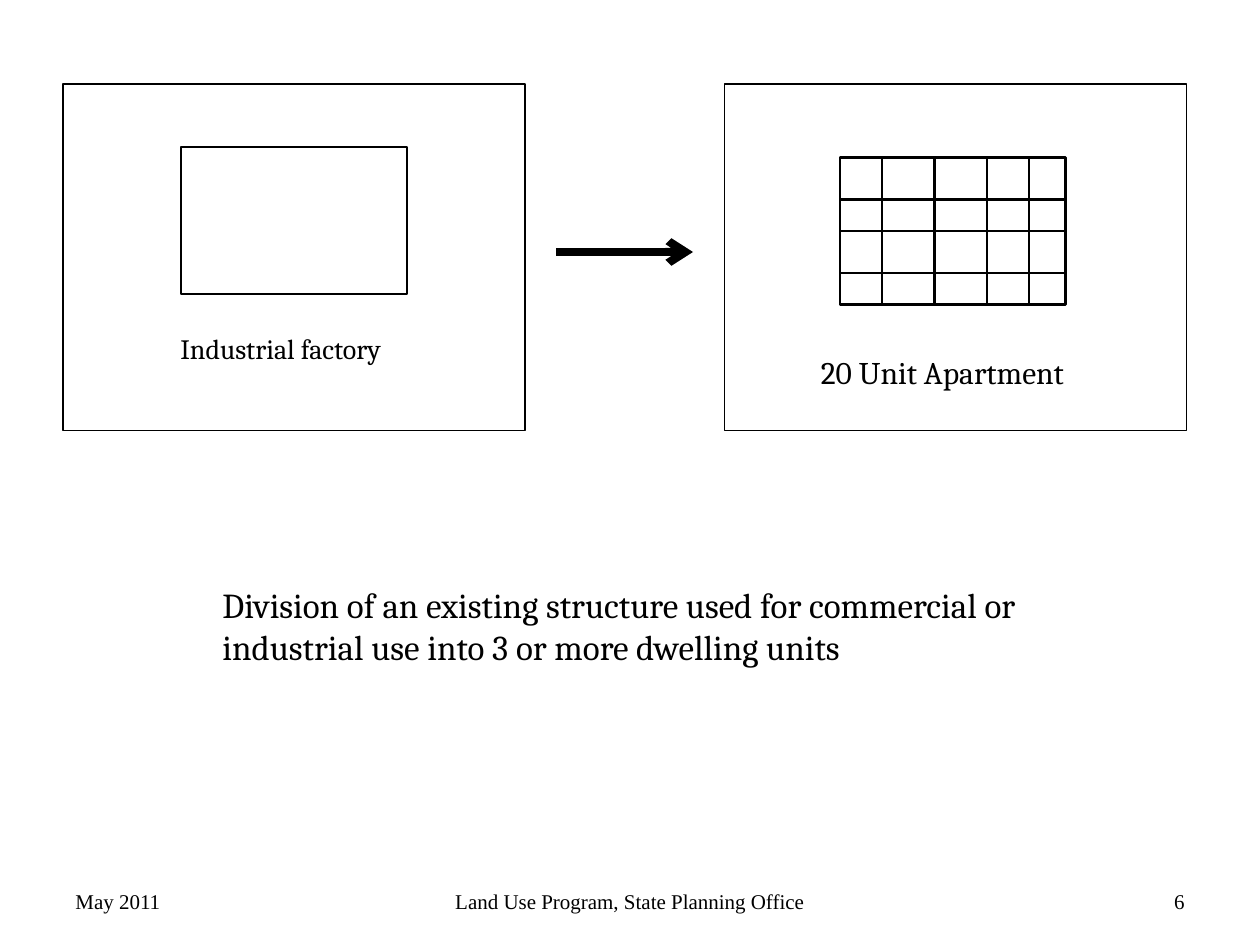
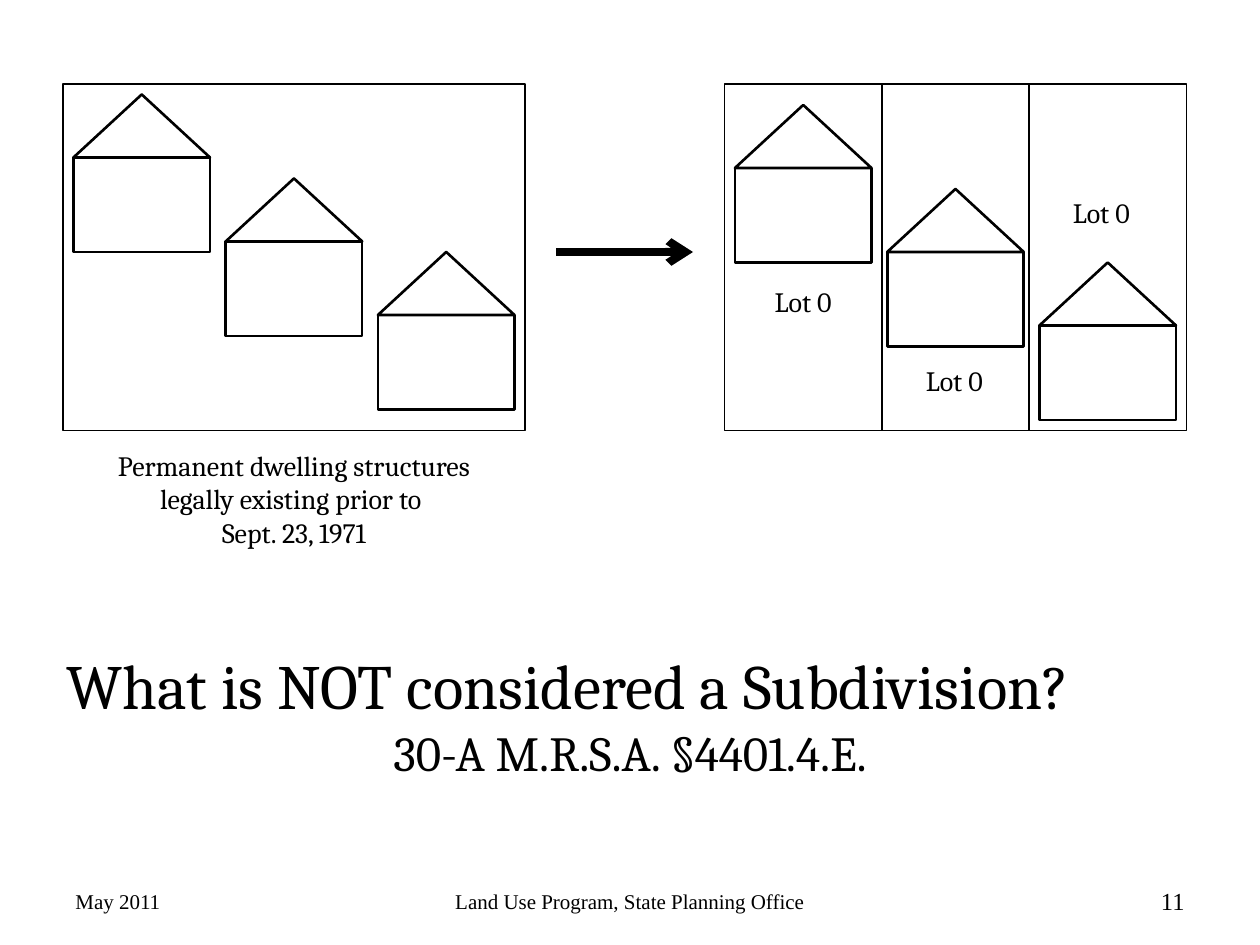
import pptx
import pptx.util
import pptx.dml.color
import pptx.enum.shapes
import pptx.enum.text
import pptx.oxml.ns
import lxml.etree

BLACK = pptx.dml.color.RGBColor(0, 0, 0)
WHITE = pptx.dml.color.RGBColor(255, 255, 255)
HEAD = "Cambria"
FOOT = "Times New Roman"
RECT = pptx.enum.shapes.MSO_SHAPE.RECTANGLE
ROOF = pptx.enum.shapes.MSO_SHAPE.ISOSCELES_TRIANGLE
LINE = pptx.enum.shapes.MSO_CONNECTOR.STRAIGHT
LEFT = pptx.enum.text.PP_ALIGN.LEFT
MID = pptx.enum.text.PP_ALIGN.CENTER
RIGHT = pptx.enum.text.PP_ALIGN.RIGHT

deck = pptx.Presentation()
deck.slide_width = pptx.util.Inches(10)
deck.slide_height = pptx.util.Inches(7.5)
COL = deck.slide_width / 120
ROW = deck.slide_height / 90


def draw(slide, kind, x, y, w, h, pts, fill=None):
    left, top, wide, high = [round(n) for n in (x * COL, y * ROW, w * COL, h * ROW)]
    if kind is LINE:
        item = slide.shapes.add_connector(kind, left, top, left + wide, top + high)
    else:
        item = slide.shapes.add_shape(kind, left, top, wide, high)
        item.shadow.inherit = False
        if fill is None:
            item.fill.background()
        else:
            item.fill.solid()
            item.fill.fore_color.rgb = fill
    item.line.color.rgb = BLACK
    item.line.width = pptx.util.Pt(pts)
    if kind is LINE:
        lxml.etree.SubElement(item._element.spPr, pptx.oxml.ns.qn("a:effectLst"))
    return item


def write(slide, x, y, w, h, parts, font=HEAD, wrap=True):
    box = slide.shapes.add_textbox(*[round(n) for n in (x * COL, y * ROW, w * COL, h * ROW)])
    frame = box.text_frame
    frame.word_wrap = wrap
    if font == FOOT:
        frame.vertical_anchor = pptx.enum.text.MSO_ANCHOR.MIDDLE
    for n, (text, size, side) in enumerate(parts):
        para = frame.add_paragraph() if n else frame.paragraphs[0]
        para.alignment = side
        run = para.add_run()
        run.text = text
        run.font.name = font
        run.font.size = pptx.util.Pt(size)
        run.font.color.rgb = BLACK


pages = []
for num, size in (("6", 12), ("11", 14)):
    page = deck.slides.add_slide(deck.slide_layouts[6])
    pages.append(page)
    for x in (6, 69):
        draw(page, RECT, x, 8, 44, 33, 1, WHITE)
    arrow = draw(page, LINE, 53, 24, 13, 0, 4.5)
    tip = lxml.etree.SubElement(arrow.line._get_or_add_ln(), pptx.oxml.ns.qn("a:tailEnd"))
    tip.set("type", "arrow")
    for x, w, text, pts, side in (
        (86, 28, num, size, RIGHT),
        (41, 38, "Land Use Program, State Planning Office", 12, MID),
        (6, 28, "May 2011", 12, LEFT),
    ):
        write(page, x, 83.4, w, 4.8, [(text, pts, side)], FOOT)
units, lots = pages

draw(units, RECT, 17.25, 14, 21.5, 14, 1.5)
draw(units, RECT, 80, 15, 21.5, 14, 1.5)
for x in (84, 89, 94, 98):
    draw(units, LINE, x, 15, 0, 14, 1.5)
for y in (19, 22, 26):
    draw(units, LINE, 80, y, 21.5, 0, 1.5)
write(units, 16, 31, 26, 4.4, [("Industrial factory", 16, LEFT)])
write(units, 77, 33, 27.7, 4.8, [("20 Unit Apartment", 18, LEFT)], wrap=False)
write(units, 20, 55, 86, 9.2, [
    ("Division of an existing structure used for commercial or industrial use into 3 or more dwelling units", 20, LEFT),
])

for x in (84, 98):
    draw(lots, LINE, x, 8, 0, 33, 1)
for dx, dy in ((0, 0), (63, 1)):
    for n, y in enumerate((9, 17, 24)):
        x = 7 + 14.5 * n + dx
        draw(lots, RECT, x, y + dy + 6, 13, 9, 1.5)
        draw(lots, ROOF, x, y + dy, 13, 6, 1.5)
for x, y in ((72.6, 26.5), (87, 34), (101, 18)):
    write(lots, x, y, 8.4, 4.4, [("Lot 0", 16, LEFT)], wrap=False)
write(lots, 8, 42.1, 40, 10.9, [
    ("Permanent dwelling structures legally existing prior to ", 16, MID),
    ("Sept. 23, 1971", 16, MID),
])
write(lots, 5.15, 61, 109.7, 14.2, [
    ("What is NOT considered a Subdivision?", 36, LEFT),
    ("30-A M.R.S.A. §4401.4.E.", 28, MID),
])

deck.save("out.pptx")
